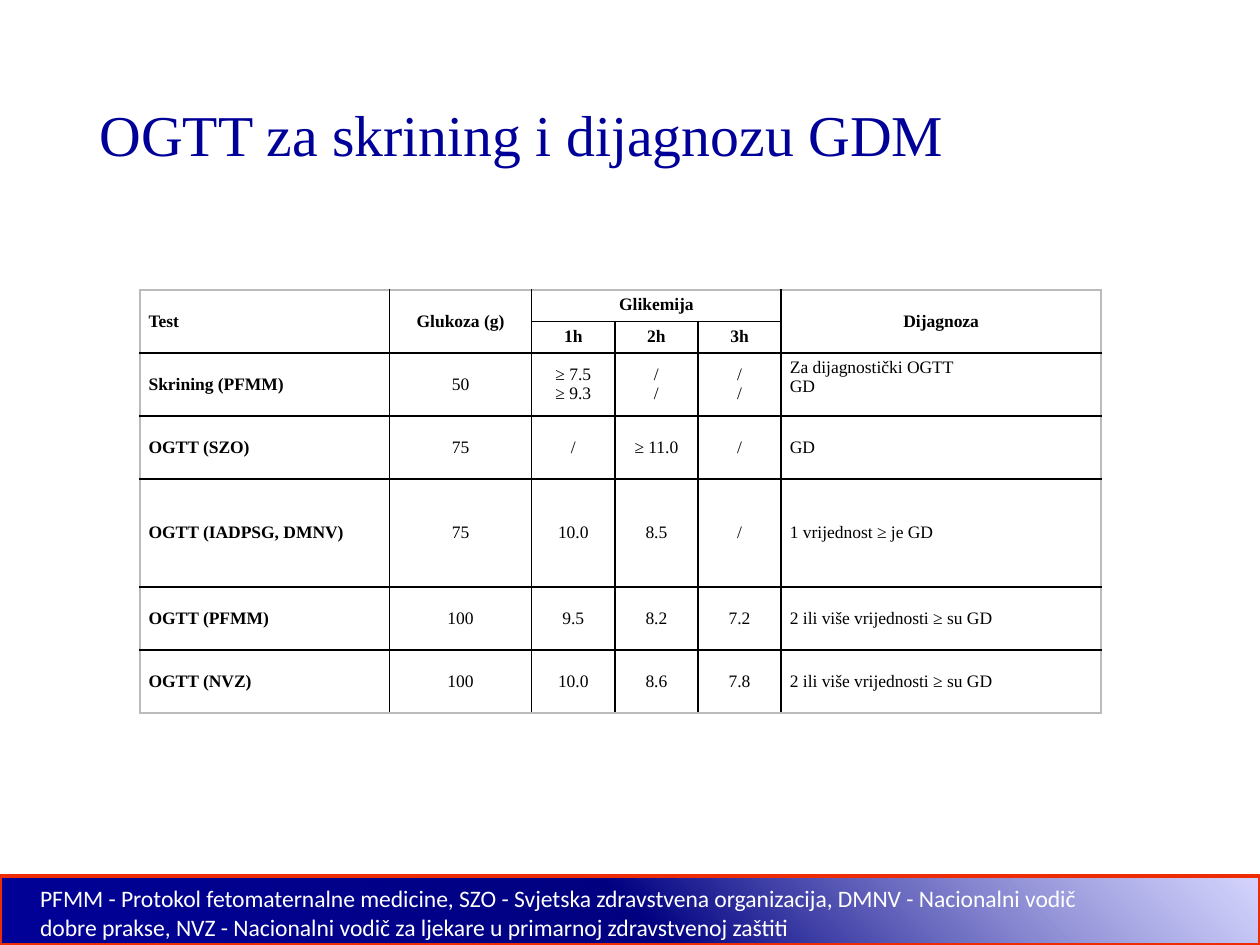
from lxml import etree
from pptx import Presentation
from pptx import util as u
from pptx.dml.color import RGBColor
from pptx.enum import shapes, text
from pptx.oxml import parse_xml
from pptx.oxml.ns import nsdecls, qn

INK = {"navy": "000099", "deep": "000081", "pale": "C4C4FF", "red": "ED2C05",
       "white": "FFFFFF", "black": "000000", "grey": "BBBBBB"}
LEFT, MID = text.PP_ALIGN.LEFT, text.PP_ALIGN.CENTER
TOP, HALF = text.MSO_ANCHOR.TOP, text.MSO_ANCHOR.MIDDLE

COLS = [19.8, 11.3, 6.6, 6.6, 6.6, 25.4]
ROWS = [2.5, 2.5, 5, 5, 8.6, 5, 5]
CELLS = [
    ["Test", "Glukoza (g)", "Glikemija", "", "", "Dijagnoza"],
    ["", "", "1h", "2h", "3h", ""],
    ["Skrining (PFMM)", "50", "≥ 7.5\n≥ 9.3", "/\n/", "/\n/", "Za dijagnostički OGTT\nGD"],
    ["OGTT (SZO)", "75", "/", "≥ 11.0", "/", "GD"],
    ["OGTT (IADPSG, DMNV)", "75", "10.0", "8.5", "/", "1 vrijednost ≥ je GD"],
    ["OGTT (PFMM)", "100", "9.5", "8.2", "7.2", "2 ili više vrijednosti ≥ su GD"],
    ["OGTT (NVZ)", "100", "10.0", "8.6", "7.8", "2 ili više vrijednosti ≥ su GD"],
]
SPANS = [(0, 0, 1, 0), (0, 1, 1, 1), (0, 2, 0, 4), (0, 5, 1, 5)]
HIGH = [(0, 2), (2, 5)]
NOTE = ("PFMM - Protokol fetomaternalne medicine, SZO - Svjetska zdravstvena organizacija, "
        "DMNV - Nacionalni vodič dobre prakse, NVZ - Nacionalni vodič za ljekare "
        "u primarnoj zdravstvenoj zaštiti")


def put(item, form):
    for key, val in form.items():
        setattr(item, key, val)


class Deck:
    serif, sans = "Times New Roman", "Calibri"

    def __init__(self):
        self.show = Presentation()
        put(self.show, {"slide_width": u.Inches(10), "slide_height": u.Inches(7.5)})
        self.unit = self.show.slide_width / 100
        self.slide = self.show.slides.add_slide(self.show.slide_layouts[5])

    def span(self, size):
        return u.Emu(round(size * self.unit))

    def box(self, *grid):
        return [self.span(size) for size in grid]

    def words(self, frame, copy, face, size, ink, bold=False, align=LEFT):
        frame.text = copy
        for par in frame.paragraphs:
            par.alignment = align
            for run in par.runs:
                put(run.font, {"name": face, "size": u.Pt(size), "bold": bold})
                run.font.color.rgb = RGBColor.from_string(INK[ink])

    def title(self, label, *grid):
        head = self.slide.shapes.title
        put(head, dict(zip(("left", "top", "width", "height"), self.box(*grid))))
        put(head.text_frame, {"vertical_anchor": HALF, "word_wrap": True})
        self.words(head.text_frame, label, self.serif, 33, "navy")
        head.text_frame.paragraphs[0].line_spacing = 0.9

    def band(self, *grid):
        bar = self.slide.shapes.add_shape(shapes.MSO_SHAPE.RECTANGLE, *self.box(*grid))
        bar.shadow.inherit = False
        bar.line.color.rgb = RGBColor.from_string(INK["red"])
        bar.line.width = u.Pt(2.25)
        bar.fill.gradient()
        bar.fill.gradient_angle = 225
        stops = bar.element.spPr.find(".//" + qn("a:gsLst"))
        for stop in list(stops):
            stops.remove(stop)
        for place, ink, solid in ((0, "pale", 68), (50, "deep", 100), (100, "navy", 100)):
            stop = etree.SubElement(stops, qn("a:gs"), pos=str(place * 1000))
            tone = etree.SubElement(stop, qn("a:srgbClr"), val=INK[ink])
            if solid < 100:
                etree.SubElement(tone, qn("a:alpha"), val=str(solid * 1000))

    def note(self, label, *grid):
        frame = self.slide.shapes.add_textbox(*self.box(*grid)).text_frame
        frame.word_wrap = True
        self.words(frame, label, self.sans, 13.5, "white")

    def edge(self, cell, sides):
        for side, ink in sides.items():
            cell._tc.get_or_add_tcPr().append(parse_xml(
                f'<a:ln{side} {nsdecls("a")} w="12700"><a:solidFill>'
                f'<a:srgbClr val="{INK[ink]}"/></a:solidFill></a:ln{side}>'))

    def table(self, left, top):
        grid = self.box(left, top, sum(COLS), sum(ROWS))
        table = self.slide.shapes.add_table(len(ROWS), len(COLS), *grid).table
        put(table, {"first_row": False, "horz_banding": False})
        for col, size in zip(table.columns, COLS):
            col.width = self.span(size)
        for row, size in zip(table.rows, ROWS):
            row.height = self.span(size)
        ends = len(ROWS) - 1, len(COLS) - 1
        for r, row in enumerate(CELLS):
            for c, label in enumerate(row):
                cell = table.cell(r, c)
                put(cell, {"margin_left": u.Inches(0.07), "margin_right": u.Inches(0.07),
                           "margin_top": u.Inches(0.04), "margin_bottom": u.Inches(0.04),
                           "vertical_anchor": TOP if (r, c) in HIGH else HALF})
                outer = {"L": c == 0, "R": c == ends[1], "T": r == 0, "B": r == ends[0]}
                self.edge(cell, {s: "grey" if out else "black" for s, out in outer.items()})
                cell.fill.background()
                mid = 0 < c < ends[1] or (r < 2 and c == ends[1])
                self.words(cell.text_frame, label, self.serif, 10, "black",
                           r < 2 or c == 0, MID if mid else LEFT)
        for r, c, low, far in SPANS:
            table.cell(r, c).merge(table.cell(low, far))


def main():
    deck = Deck()
    deck.band(0, 69.5, 100, 5.5)
    deck.title("OGTT za skrining i dijagnozu GDM", 6.9, 3.7, 86.2, 14.5)
    deck.note(NOTE, 2.2, 69.7, 85.8, 5.6)
    deck.table(11.1, 23)
    deck.show.save("out.pptx")


if __name__ == "__main__":
    main()
